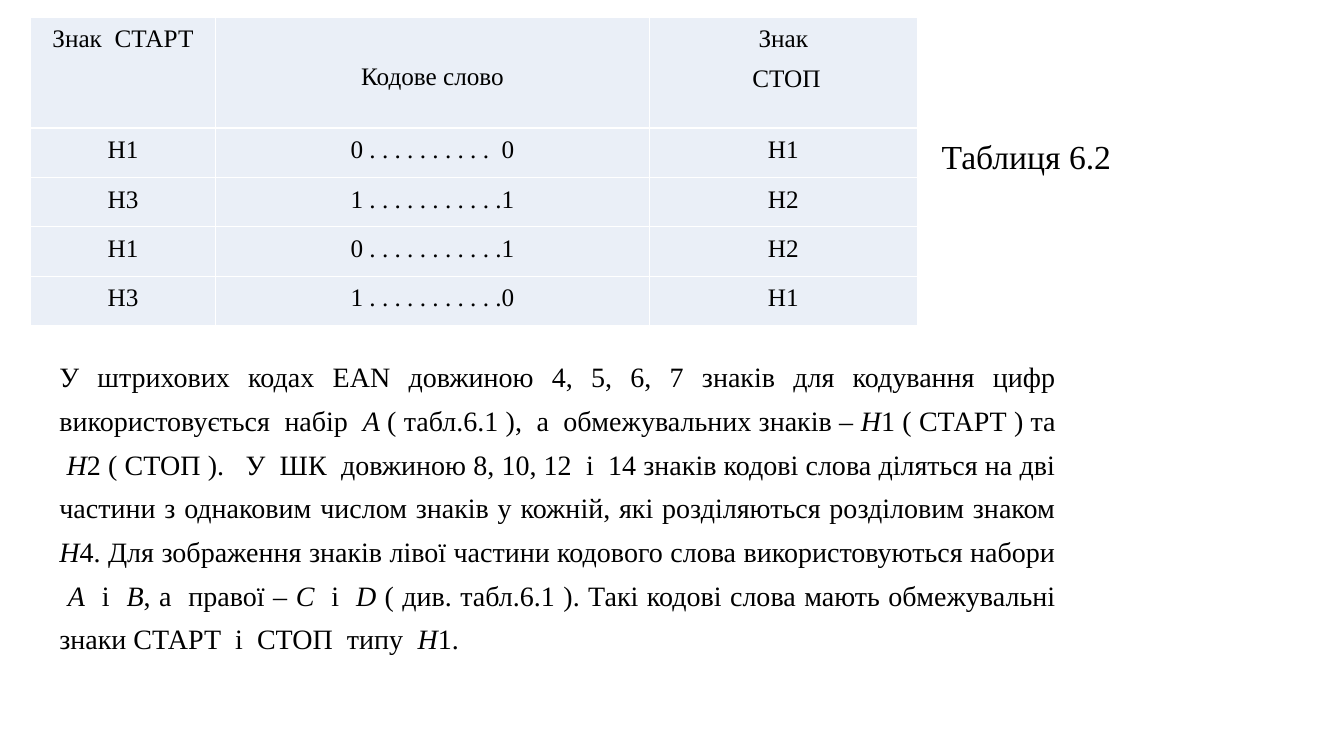
from lxml.etree import SubElement
from pptx import Presentation
from pptx.dml.color import RGBColor
from pptx.enum.text import MSO_ANCHOR, MSO_AUTO_SIZE, PP_ALIGN
from pptx.oxml.ns import qn
from pptx.util import Inches, Pt

FONT = "Times New Roman"
BLACK, WHITE, PALE_BLUE = "000000", "FFFFFF", "EAEFF7"

CODE_ROWS = [
    ("Знак  СТАРТ", "Кодове слово", "Знак\n СТОП"),
    ("Н1", "0 . . . . . . . . . .  0", "Н1"),
    ("Н3", "1 . . . . . . . . . . .1", "Н2"),
    ("Н1", "0 . . . . . . . . . . .1", "Н2"),
    ("Н3", "1 . . . . . . . . . . .0", "Н1"),
]
COLUMN_WIDTHS = (1.84, 4.3, 2.66)
HEADER_HEIGHT, ROW_HEIGHT = 1.1, 0.49
TABLE_LEFT, TABLE_TOP = 0.3, 0.17

CAPTION = "Таблиця 6.2"
CAPTION_BOX = (9.24, 1.3, 1.98, 0.5)

EXPLANATION = (
    "У штрихових кодах EAN довжиною 4, 5, 6, 7 знаків для кодування цифр "
    "використовується  набір  *А* ( табл.6.1 ),  а  обмежувальних знаків – "
    "*Н*1 ( СТАРТ ) та  *Н*2 ( СТОП ).   У  ШК  довжиною 8, 10, 12  і  14 знаків "
    "кодові слова діляться на дві частини з однаковим числом знаків у кожній, "
    "які розділяються розділовим знаком *Н*4. Для зображення знаків лівої частини "
    "кодового слова використовуються набори  *А*  і  *В*, а  правої – *С*  і  *D* "
    "( див. табл.6.1 ). Такі кодові слова мають обмежувальні знаки СТАРТ  і  СТОП  "
    "типу  *Н*1."
)
EXPLANATION_BOX = (0.49, 3.42, 10.08, 3.16)


def color(value):
    return RGBColor.from_string(value)


def write_text(frame, text, size, align=PP_ALIGN.LEFT, line_spacing=1.0, space_before=0):
    for index, line in enumerate(text.split("\n")):
        paragraph = frame.paragraphs[0] if index == 0 else frame.add_paragraph()
        paragraph.alignment = align
        paragraph.line_spacing = line_spacing
        paragraph.space_before = Pt(space_before)
        for part_index, part in enumerate(line.split("*")):
            run = paragraph.add_run()
            run.text = part
            run.font.name = FONT
            run.font.size = Pt(size)
            run.font.bold = False
            run.font.italic = part_index % 2 == 1
            run.font.color.rgb = color(BLACK)


def add_text(slide, box, text, wrap=True, **text_format):
    shape = slide.shapes.add_textbox(*map(Inches, box))
    shape.text_frame.word_wrap = wrap
    shape.text_frame.auto_size = MSO_AUTO_SIZE.SHAPE_TO_FIT_TEXT
    write_text(shape.text_frame, text, **text_format)


def set_borders(cell, value, width):
    properties = cell._tc.get_or_add_tcPr()
    for index, side in enumerate(("a:lnL", "a:lnR", "a:lnT", "a:lnB")):
        line = SubElement(properties, qn(side), w=str(Pt(width)))
        fill = SubElement(line, qn("a:solidFill"))
        SubElement(fill, qn("a:srgbClr"), val=value)
        properties.remove(line)
        properties.insert(index, line)


def add_code_table(slide):
    row_heights = [HEADER_HEIGHT] + [ROW_HEIGHT] * (len(CODE_ROWS) - 1)
    box = (TABLE_LEFT, TABLE_TOP, sum(COLUMN_WIDTHS), sum(row_heights))
    table = slide.shapes.add_table(
        len(CODE_ROWS), len(COLUMN_WIDTHS), *map(Inches, box)
    ).table
    table.first_row = table.horz_banding = False
    for column, width in zip(table.columns, COLUMN_WIDTHS):
        column.width = Inches(width)
    for row, height, texts in zip(table.rows, row_heights, CODE_ROWS):
        row.height = Inches(height)
        for cell, text in zip(row.cells, texts):
            cell.margin_left = cell.margin_right = Inches(0.07)
            cell.margin_top = cell.margin_bottom = 0
            cell.fill.solid()
            cell.fill.fore_color.rgb = color(PALE_BLUE)
            set_borders(cell, WHITE, 1)
            write_text(cell.text_frame, text, size=18, align=PP_ALIGN.CENTER,
                       line_spacing=1.3, space_before=2)
    table.cell(0, 1).vertical_anchor = MSO_ANCHOR.MIDDLE


def main():
    presentation = Presentation()
    presentation.slide_width = Inches(13.33)
    presentation.slide_height = Inches(7.5)
    slide = presentation.slides.add_slide(presentation.slide_layouts[6])
    add_code_table(slide)
    add_text(slide, EXPLANATION_BOX, EXPLANATION, size=20,
             align=PP_ALIGN.JUSTIFY, line_spacing=1.3)
    add_text(slide, CAPTION_BOX, CAPTION, wrap=False, size=24)
    presentation.save("out.pptx")


if __name__ == "__main__":
    main()
